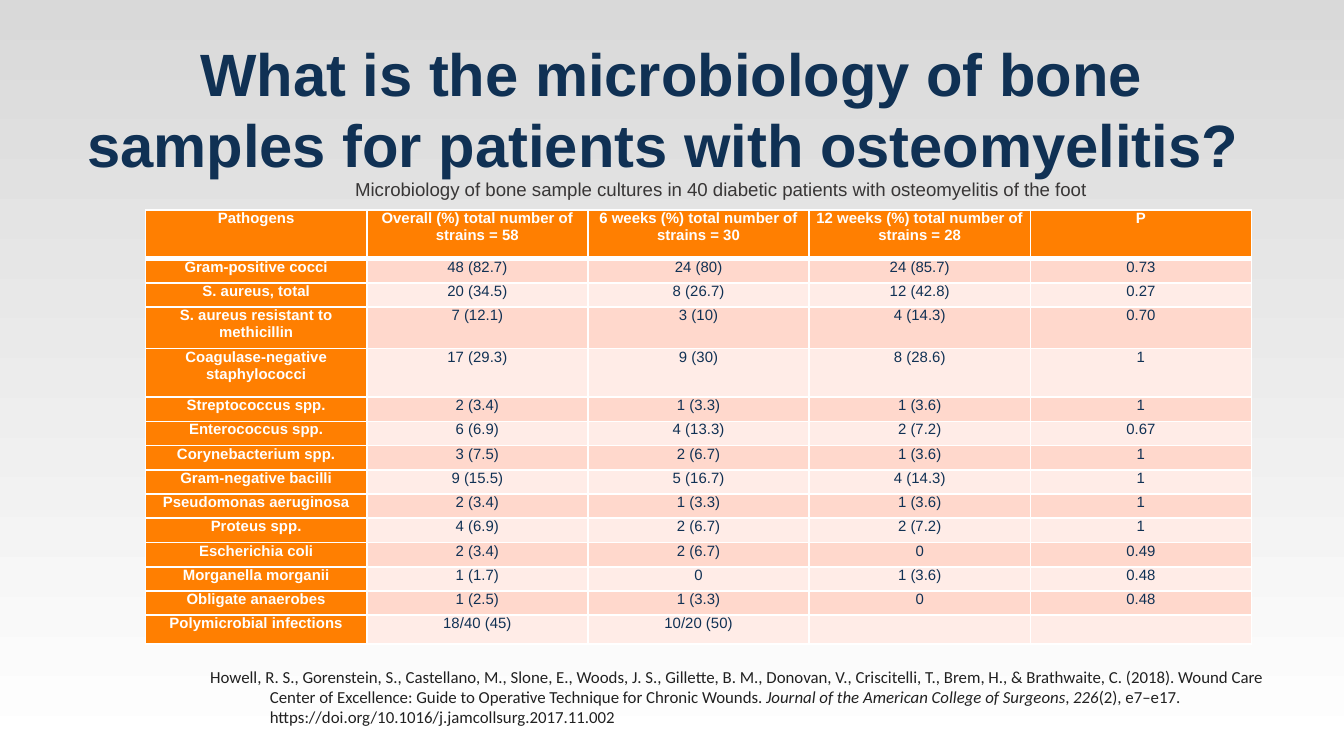
from lxml.etree import SubElement
from pptx import Presentation
from pptx.dml.color import RGBColor
from pptx.enum.text import MSO_ANCHOR as Anchor, PP_ALIGN as Align
from pptx.oxml.ns import qn
from pptx.util import Pt

WHITE = RGBColor(0xFF, 0xFF, 0xFF)
GREY = RGBColor(0xD9, 0xD9, 0xD9)
NAVY = RGBColor(0x10, 0x31, 0x54)
ORANGE = RGBColor(0xFF, 0x7F, 0x01)
BAND_DARK = RGBColor(0xFF, 0xD8, 0xCC)
BAND_LIGHT = RGBColor(0xFF, 0xEC, 0xE7)
CAPTION_GREY = RGBColor(0x38, 0x36, 0x36)
CITATION_BLACK = RGBColor(0x21, 0x21, 0x21)

HEADINGS = (
    "Pathogens",
    "Overall (%) total number of strains = 58",
    "6 weeks (%) total number of strains = 30",
    "12 weeks (%) total number of strains = 28",
    "P",
)
PATHOGENS = [
    ("Gram-positive cocci", "48 (82.7)", "24 (80)", "24 (85.7)", "0.73"),
    ("S. aureus, total", "20 (34.5)", "8 (26.7)", "12 (42.8)", "0.27"),
    ("S. aureus resistant to methicillin", "7 (12.1)", "3 (10)", "4 (14.3)", "0.70"),
    ("Coagulase-negative staphylococci", "17 (29.3)", "9 (30)", "8 (28.6)", "1"),
    ("Streptococcus spp.", "2 (3.4)", "1 (3.3)", "1 (3.6)", "1"),
    ("Enterococcus spp.", "6 (6.9)", "4 (13.3)", "2 (7.2)", "0.67"),
    ("Corynebacterium spp.", "3 (7.5)", "2 (6.7)", "1 (3.6)", "1"),
    ("Gram-negative bacilli", "9 (15.5)", "5 (16.7)", "4 (14.3)", "1"),
    ("Pseudomonas aeruginosa", "2 (3.4)", "1 (3.3)", "1 (3.6)", "1"),
    ("Proteus spp.", "4 (6.9)", "2 (6.7)", "2 (7.2)", "1"),
    ("Escherichia coli", "2 (3.4)", "2 (6.7)", "0", "0.49"),
    ("Morganella morganii", "1 (1.7)", "0", "1 (3.6)", "0.48"),
    ("Obligate anaerobes", "1 (2.5)", "1 (3.3)", "0", "0.48"),
    ("Polymicrobial infections", "18/40 (45)", "10/20 (50)", "", ""),
]
ROW_HEIGHT = 13
TALL_ROWS = {0: 26, 3: 22.3, 4: 26, 14: 15.5}

CITATION = [
    ("Howell, R. S., Gorenstein, S., Castellano, M., Slone, E., Woods, J. S., "
     "Gillette, B. M., Donovan, V., Criscitelli, T., Brem, H., & Brathwaite, C. "
     "(2018). Wound Care Center of Excellence: Guide to Operative Technique for "
     "Chronic Wounds. ", False),
    ("Journal of the American College of Surgeons", True),
    (", ", False),
    ("226", True),
    ("(2), e7–e17. https://doi.org/10.1016/j.jamcollsurg.2017.11.002", False),
]


def style(paragraph, name, size, color, bold=False, align=Align.CENTER):
    paragraph.alignment = align
    font = paragraph.font
    font.name, font.size, font.bold = name, Pt(size), bold
    font.color.rgb = color


def paint_background(slide):
    fill = slide.background.fill
    fill.gradient()
    fill.gradient_angle = 90
    for stop, color in zip(fill.gradient_stops, (WHITE, GREY)):
        stop.color.rgb = color


def place_title(slide, left, top, width, height):
    title = slide.shapes.title
    title.left, title.top = Pt(left), Pt(top)
    title.width, title.height = Pt(width), Pt(height)
    frame = title.text_frame
    frame.text = "What is the microbiology of bone samples for patients with osteomyelitis? "
    frame.vertical_anchor = Anchor.TOP
    heading = frame.paragraphs[0]
    heading.line_spacing = Pt(38)
    style(heading, "Arial", 32, NAVY, bold=True)


def add_caption(slide, left, top, width, height):
    caption = slide.shapes.add_textbox(Pt(left), Pt(top), Pt(width), Pt(height))
    frame = caption.text_frame
    frame.word_wrap = True
    frame.text = ("Microbiology of bone sample cultures in 40 diabetic patients "
                  "with osteomyelitis of the foot")
    style(frame.paragraphs[0], "Arial", 10, CAPTION_GREY)


def add_borders(cell, **widths):
    properties = cell._tc.get_or_add_tcPr()
    for side in "LRTB":
        line = SubElement(properties, qn(f"a:ln{side}"), w=str(Pt(widths.get(side, 1))))
        fill = SubElement(line, qn("a:solidFill"))
        SubElement(fill, qn("a:srgbClr"), val=str(WHITE))


def fill_cell(cell, text, row, column):
    is_heading = row == 0 or column == 0
    cell.margin_left = cell.margin_right = cell.margin_top = cell.margin_bottom = 0
    if row == 0:
        add_borders(cell, B=3)
    elif row == 1:
        add_borders(cell, T=3)
    else:
        add_borders(cell)
    cell.fill.solid()
    band = BAND_DARK if row % 2 else BAND_LIGHT
    cell.fill.fore_color.rgb = ORANGE if is_heading else band
    cell.text = text
    paragraph = cell.text_frame.paragraphs[0]
    style(paragraph, "Arial", 8, WHITE if is_heading else NAVY, bold=is_heading)
    if not text:
        SubElement(paragraph._p, qn("a:endParaRPr"), sz="800")


def add_pathogen_table(slide, left, top, width, height):
    rows = [HEADINGS, *PATHOGENS]
    table = slide.shapes.add_table(
        len(rows), len(HEADINGS), Pt(left), Pt(top), Pt(width), Pt(height)).table
    for column in table.columns:
        column.width = Pt(width / len(HEADINGS))
    for r, values in enumerate(rows):
        table.rows[r].height = Pt(TALL_ROWS.get(r, ROW_HEIGHT))
        for c, value in enumerate(values):
            fill_cell(table.cell(r, c), value, r, c)


def add_citation(slide, left, top, width, height):
    citation = slide.shapes.add_textbox(Pt(left), Pt(top), Pt(width), Pt(height))
    frame = citation.text_frame
    frame.word_wrap = True
    reference = frame.paragraphs[0]
    style(reference, "Calibri", 9, CITATION_BLACK, align=Align.LEFT)
    hanging = Pt(32)
    properties = reference._p.get_or_add_pPr()
    properties.set("marL", str(hanging))
    properties.set("indent", str(-hanging))
    for text, italic in CITATION:
        run = reference.add_run()
        run.text = text
        run.font.italic = italic


def main():
    deck = Presentation()
    deck.slide_width, deck.slide_height = Pt(720), Pt(405)
    slide = deck.slides.add_slide(deck.slide_layouts[5])
    paint_background(slide)
    place_title(slide, 36, 16.5, 648, 68)
    add_citation(slide, 105.5, 353.5, 578.5, 40)
    add_pathogen_table(slide, 78, 112.5, 592.5, 232.8)
    add_caption(slide, 102, 92, 568, 41)
    deck.save("out.pptx")


if __name__ == "__main__":
    main()
